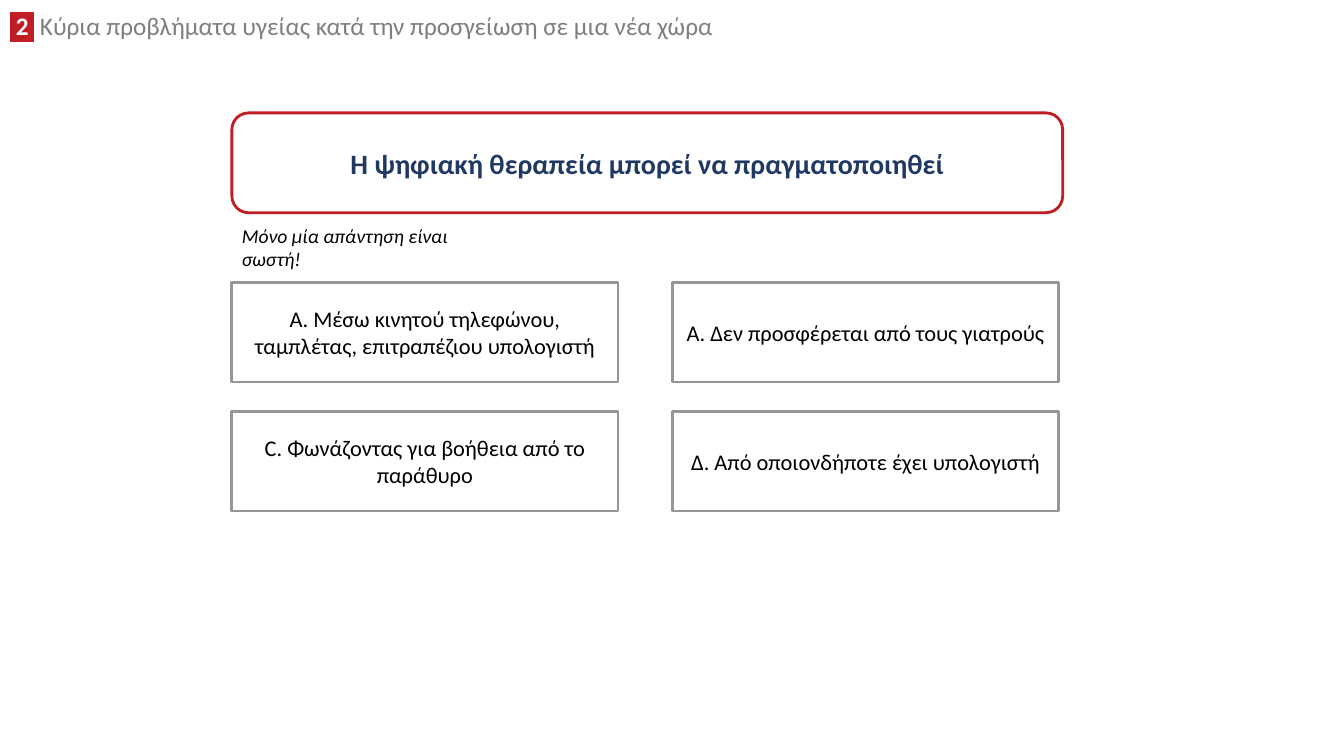
from pptx import Presentation, util as u
from pptx.dml.color import RGBColor
from pptx.enum import shapes, text
from lxml import etree

W, H = 13.33, 7.5
LEFT, TOP = 2.3, 2.8
COL_STEP, ROW_STEP = 4.37, 1.28
BOX_W, BOX_H = 3.83, 0.99
RED, GREY, NAVY = "C01E24", "969696", "203864"
ANSWERS = [
    ["Α. Μέσω κινητού τηλεφώνου, ταμπλέτας, επιτραπέζιου υπολογιστή",
     "Α. Δεν προσφέρεται από τους γιατρούς"],
    ["C. Φωνάζοντας για βοήθεια από το παράθυρο",
     "Δ. Από οποιονδήποτε έχει υπολογιστή"],
]


def color(hex_str):
    return RGBColor.from_string(hex_str)


def inches(*values):
    return [u.Inches(v) for v in values]


def add_run(p, words, size, hex_str="000000", **fmt):
    r = p.add_run()
    r.text = words
    r.font.color.rgb = color(hex_str)
    for name, value in {"name": "Calibri", "size": u.Pt(size), **fmt}.items():
        setattr(r.font, name, value)
    return r


def highlight(r, hex_str):
    ns = "{http://schemas.openxmlformats.org/drawingml/2006/main}"
    mark = etree.Element(ns + "highlight")
    etree.SubElement(mark, ns + "srgbClr", val=hex_str)
    r.font.fill
    r.font._element.find(ns + "solidFill").addnext(mark)


def add_header(slide, number, words):
    sp = slide.shapes.title
    sp.left, sp.top, sp.width, sp.height = inches(0, 0.11, 8.31, 0.35)
    tf = sp.text_frame
    fmt = {"word_wrap": True, "vertical_anchor": text.MSO_ANCHOR.TOP,
           "auto_size": text.MSO_AUTO_SIZE.SHAPE_TO_FIT_TEXT}
    for name, value in fmt.items():
        setattr(tf, name, value)
    p = tf.paragraphs[0]
    p.alignment, p.line_spacing = text.PP_ALIGN.LEFT, 0.8
    highlight(add_run(p, f" {number} ", 18, "FFFFFF", bold=True), RED)
    add_run(p, " " + words, 18, "7F7F7F", bold=False)


def add_box(slide, kind, at, line, words, size, **fmt):
    sp = slide.shapes.add_shape(kind, *inches(*at))
    sp.shadow.inherit = False
    sp.fill.solid()
    sp.fill.fore_color.rgb = color("FFFFFF")
    sp.line.color.rgb = color(line)
    sp.line.width = u.Pt(2)
    tf = sp.text_frame
    tf.word_wrap = True
    tf.vertical_anchor = text.MSO_ANCHOR.MIDDLE
    p = tf.paragraphs[0]
    p.alignment = text.PP_ALIGN.CENTER
    add_run(p, words, size, **fmt)


def add_hint(slide, at, words):
    tf = slide.shapes.add_textbox(*inches(*at)).text_frame
    tf.word_wrap = True
    tf.auto_size = text.MSO_AUTO_SIZE.SHAPE_TO_FIT_TEXT
    add_run(tf.paragraphs[0], words, 14, italic=True)


def main():
    prs = Presentation()
    prs.slide_width, prs.slide_height = inches(W, H)
    slide = prs.slides.add_slide(prs.slide_layouts[5])
    add_header(slide, 2, "Κύρια προβλήματα υγείας κατά την προσγείωση σε μια νέα χώρα")
    add_box(slide, shapes.MSO_SHAPE.ROUNDED_RECTANGLE, (LEFT, 1.12, 8.24, BOX_H), RED,
            "Η ψηφιακή θεραπεία μπορεί να πραγματοποιηθεί", 20, hex_str=NAVY, bold=True)
    add_hint(slide, (LEFT, 2.17, 2.87, 0.34), "Μόνο μία απάντηση είναι σωστή!")
    for row, answers in enumerate(ANSWERS):
        for col, words in enumerate(answers):
            at = (LEFT + col * COL_STEP, TOP + row * ROW_STEP, BOX_W, BOX_H)
            add_box(slide, shapes.MSO_SHAPE.RECTANGLE, at, GREY, words, 16)
    prs.save("out.pptx")


if __name__ == "__main__":
    main()
